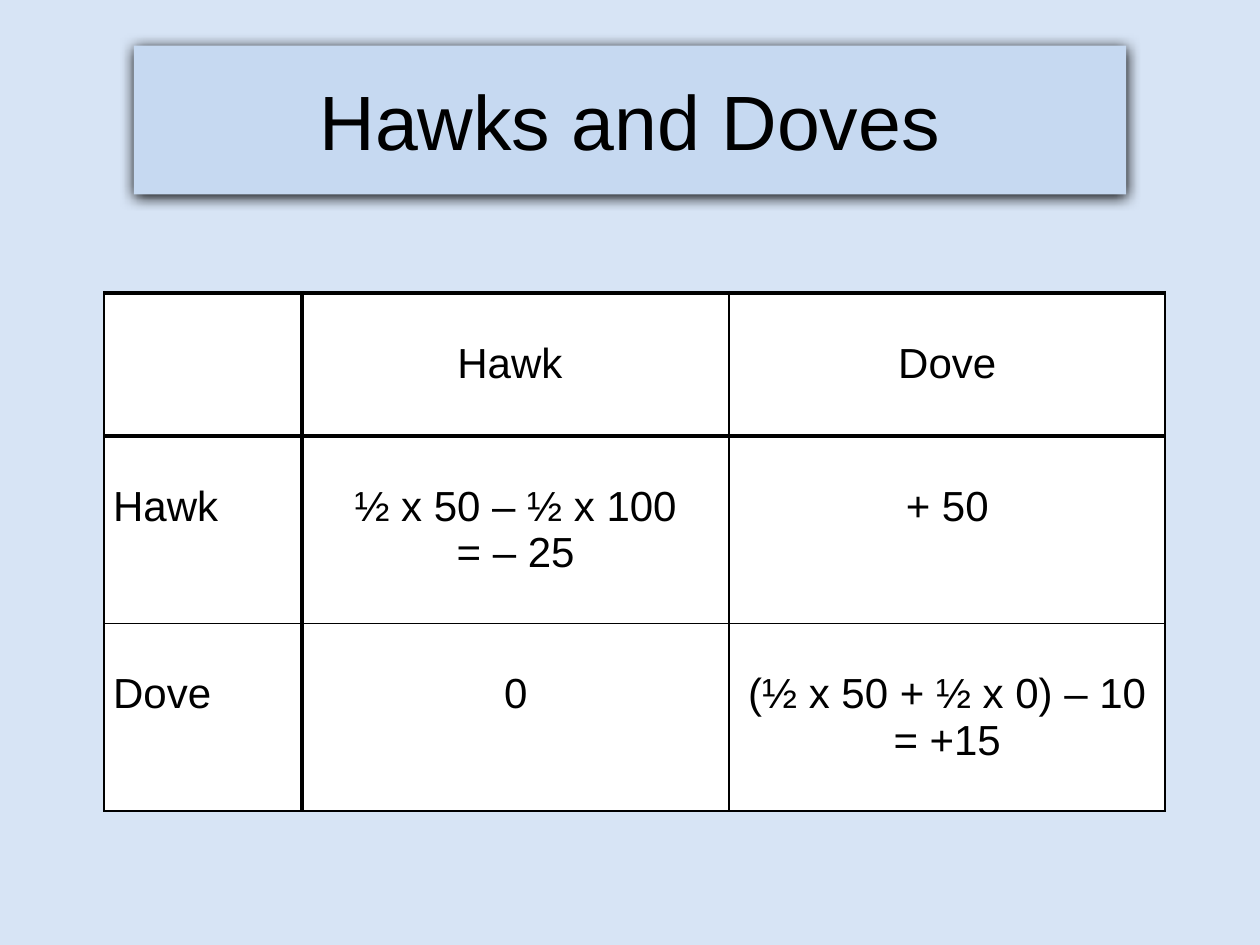
from lxml.etree import SubElement
from pptx import Presentation
from pptx.dml.color import RGBColor
from pptx.enum.text import MSO_ANCHOR, PP_ALIGN
from pptx.oxml.ns import qn
from pptx.util import Cm, Pt

TITLE = "Hawks and Doves"
PAYOFFS = [
    ["", "Hawk ", "Dove"],
    ["Hawk", "½ x 50 – ½ x 100\n= – 25", "+ 50"],
    ["Dove", "0", "(½ x 50 + ½ x 0) – 10\n= +15"],
]
COLUMN_WIDTHS = [3.99, 8.61, 8.79]
ROW_HEIGHTS = [2.88, 3.78, 3.78]
TABLE_LEFT, TABLE_TOP = 2.1, 5.91
THIN, THICK = 1, 3
COLORS = {"background": "D7E4F5", "title": "C6D9F1", "cell": "FFFFFF", "ink": "000000"}


def set_fill(fill, color):
    fill.solid()
    fill.fore_color.rgb = RGBColor.from_string(COLORS[color])


def write_text(frame, text, size=24, align=PP_ALIGN.CENTER, font="Arial", color="ink"):
    frame.text = text
    for paragraph in frame.paragraphs:
        paragraph.alignment = align
        paragraph.font.size = Pt(size)
        for run in paragraph.runs:
            run.font.size = Pt(size)
            run.font.name = font
            run.font.color.rgb = RGBColor.from_string(COLORS[color])


def add_shadow(shape, blur, distance, angle):
    effects = SubElement(shape._element.spPr, qn("a:effectLst"))
    shadow = SubElement(effects, qn("a:outerShdw"), blurRad=str(Pt(blur)),
                        dist=str(Pt(distance)), dir=str(angle * 60000),
                        algn="ctr", rotWithShape="0")
    SubElement(shadow, qn("a:srgbClr"), val=COLORS["ink"])


def set_borders(cell, **widths):
    """Draw the sides L, R, T and B, given in that order, in points."""
    properties = cell._tc.get_or_add_tcPr()
    for side, width in widths.items():
        line = SubElement(properties, qn(f"a:ln{side}"), w=str(Pt(width)))
        fill = SubElement(line, qn("a:solidFill"))
        SubElement(fill, qn("a:srgbClr"), val=COLORS["ink"])


def add_title(slide):
    title = slide.shapes.title
    title.left, title.top, title.width, title.height = Cm(2.7), Cm(0.92), Cm(20), Cm(3)
    set_fill(title.fill, "title")
    add_shadow(title, blur=8.5, distance=1, angle=90)
    title.text_frame.vertical_anchor = MSO_ANCHOR.MIDDLE
    write_text(title.text_frame, TITLE, size=44)


def add_payoff_table(slide):
    table = slide.shapes.add_table(
        len(PAYOFFS), len(PAYOFFS[0]), Cm(TABLE_LEFT), Cm(TABLE_TOP),
        Cm(sum(COLUMN_WIDTHS)), Cm(sum(ROW_HEIGHTS))).table
    table.first_row = table.horz_banding = False
    for column, width in zip(table.columns, COLUMN_WIDTHS):
        column.width = Cm(width)
    for row, height in zip(table.rows, ROW_HEIGHTS):
        row.height = Cm(height)

    for i, values in enumerate(PAYOFFS):
        for j, value in enumerate(values):
            cell = table.cell(i, j)
            set_borders(cell,
                        L=THICK if j == 1 else THIN,
                        R=THICK if j == 0 else THIN,
                        T=THICK if i <= 1 else THIN,
                        B=THICK if i == 0 else THIN)
            set_fill(cell.fill, "cell")
            cell.margin_left = cell.margin_right = Cm(0.18)
            cell.margin_top, cell.margin_bottom = Cm(0.95), Cm(0)
            write_text(cell.text_frame, value,
                       align=PP_ALIGN.LEFT if j == 0 else PP_ALIGN.CENTER)


def main():
    presentation = Presentation()
    presentation.slide_width, presentation.slide_height = Cm(25.4), Cm(19.05)
    slide = presentation.slides.add_slide(presentation.slide_layouts.get_by_name("Title Only"))
    set_fill(slide.background.fill, "background")
    add_title(slide)
    add_payoff_table(slide)
    presentation.save("out.pptx")


if __name__ == "__main__":
    main()
